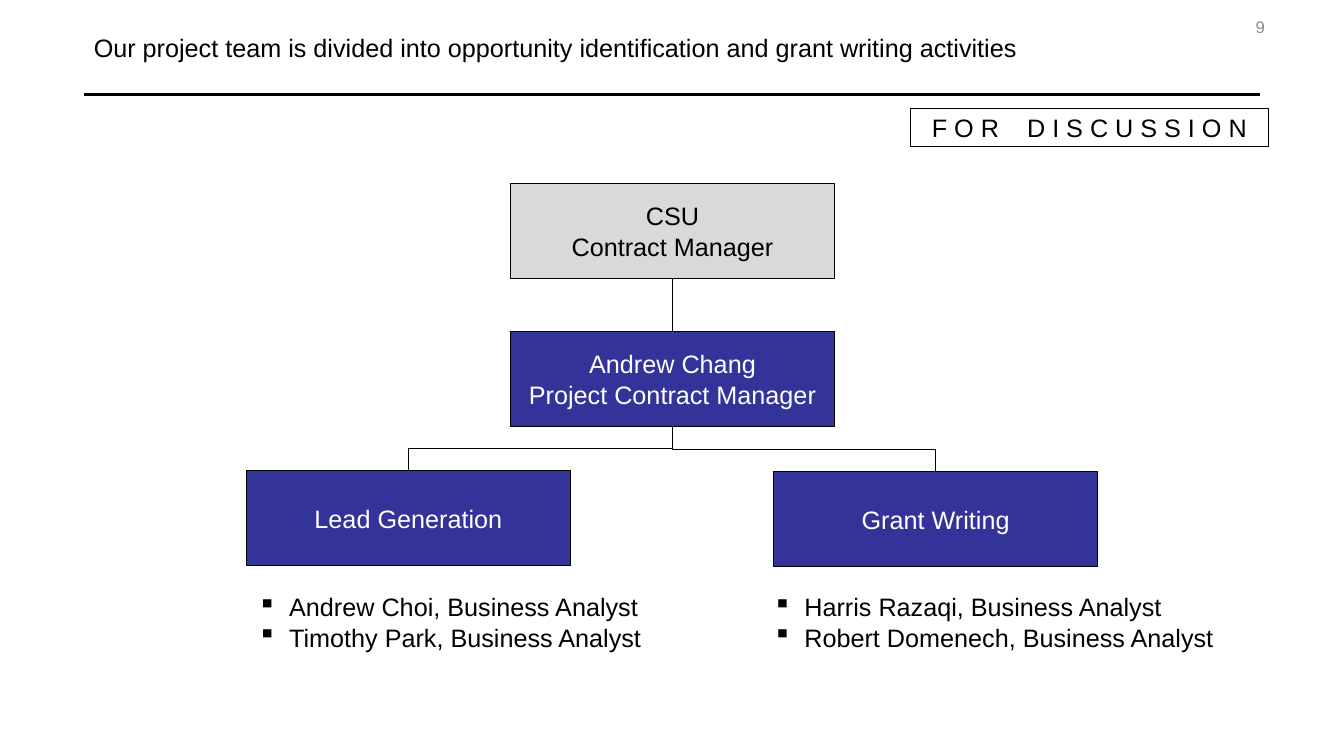
from dataclasses import dataclass

import pptx
import pptx.dml.color
import pptx.enum.shapes
import pptx.enum.text
import pptx.oxml
import pptx.oxml.ns
import pptx.util

Inches = pptx.util.Inches
Pt = pptx.util.Pt
Align = pptx.enum.text.PP_ALIGN
Anchor = pptx.enum.text.MSO_ANCHOR
Kind = pptx.enum.shapes.MSO_CONNECTOR


@dataclass(frozen=True)
class Theme:
    font: str = "Arial"
    body_size: int = 18
    number_size: int = 12
    thin_line: float = 0.75
    rule_line: float = 2
    black: str = "000000"
    white: str = "FFFFFF"
    grey: str = "D9D9D9"
    navy: str = "333399"
    muted: str = "8C8C8C"


THEME = Theme()
BOX_WIDTH, BOX_HEIGHT = 3.22, 0.94
LIST_WIDTH, LIST_HEIGHT, LIST_TOP = 5.07, 0.71, 5.82
BULLET_INDENT = 0.31
WORD_GAP = 15  # extra points after the space between the spaced-out words


@dataclass(frozen=True)
class OrgBox:
    key: str
    left: float
    top: float
    lines: tuple[str, ...]
    fill: str = THEME.navy
    color: str = THEME.white


@dataclass(frozen=True)
class StaffList:
    left: float
    names: tuple[str, ...]


ORG_BOXES = (
    OrgBox("client", 5.06, 1.82, ("CSU", "Contract Manager"), THEME.grey, THEME.black),
    OrgBox("manager", 5.06, 3.29, ("Andrew Chang", "Project Contract Manager")),
    OrgBox("writing", 7.67, 4.68, ("Grant Writing",)),
    OrgBox("leads", 2.44, 4.67, ("Lead Generation",)),
)
STAFF_LISTS = (
    StaffList(7.57, ("Harris Razaqi, Business Analyst", "Robert Domenech, Business Analyst")),
    StaffList(2.46, ("Andrew Choi, Business Analyst", "Timothy Park, Business Analyst")),
)


def rgb(value: str) -> pptx.dml.color.RGBColor:
    return pptx.dml.color.RGBColor.from_string(value)


def add_span(para, text: str, color: str = THEME.black, size: int = THEME.body_size):
    span = para.add_run()
    span.text = text
    span.font.name = THEME.font
    span.font.size = Pt(size)
    span.font.color.rgb = rgb(color)
    return span


def write_lines(frame, lines: tuple[str, ...], align, color: str = THEME.black,
                size: int = THEME.body_size, anchor=Anchor.MIDDLE) -> None:
    frame.word_wrap = True
    frame.vertical_anchor = anchor
    for index, line in enumerate(lines):
        para = frame.add_paragraph() if index else frame.paragraphs[0]
        para.alignment = align
        add_span(para, line, color, size)


def add_box(page, left: float, top: float, width: float, height: float,
            fill: str | None = None):
    box = page.shapes.add_shape(pptx.enum.shapes.MSO_SHAPE.RECTANGLE, Inches(left),
                                Inches(top), Inches(width), Inches(height))
    box.shadow.inherit = False
    if fill:
        box.fill.solid()
        box.fill.fore_color.rgb = rgb(fill)
    else:
        box.fill.background()
    box.line.color.rgb = rgb(THEME.black)
    box.line.width = Pt(THEME.thin_line)
    return box


def add_org_box(page, item: OrgBox):
    box = add_box(page, item.left, item.top, BOX_WIDTH, BOX_HEIGHT, item.fill)
    write_lines(box.text_frame, item.lines, Align.CENTER, item.color)
    return box


def add_line(page, kind, start: tuple[int, int], end: tuple[int, int],
             width: float = THEME.thin_line):
    line = page.shapes.add_connector(kind, *start, *end)
    line.line.color.rgb = rgb(THEME.black)
    line.line.width = Pt(width)
    pptx.oxml.ns  # namespace helpers are used below
    properties = line._element.spPr
    properties.append(properties.makeelement(pptx.oxml.ns.qn("a:effectLst"), {}))
    return line


def join_boxes(page, upper, lower) -> None:
    start = (upper.left + upper.width // 2, upper.top + upper.height)
    end = (lower.left + lower.width // 2, lower.top)
    across, down = end[0] - start[0], end[1] - start[1]
    line = add_line(page, Kind.ELBOW if across else Kind.STRAIGHT, start, end)
    line.begin_connect(upper, 2)
    line.end_connect(lower, 0)
    if not across:
        return
    # Turn the elbow a quarter so that it leaves downwards
    line.width, line.height = down, abs(across)
    line.left = (start[0] + end[0] - down) // 2
    line.top = (start[1] + end[1] - abs(across)) // 2
    frame = line._element.spPr.find(pptx.oxml.ns.qn("a:xfrm"))
    frame.set("rot", str((270 if across > 0 else 90) * 60000))
    frame.set("flipH", "1" if across > 0 else "0")
    frame.set("flipV", "0")


def add_text_box(page, left: float, top: float, width: float, height: float):
    return page.shapes.add_textbox(Inches(left), Inches(top), Inches(width), Inches(height))


def add_staff_list(page, staff: StaffList) -> None:
    box = add_text_box(page, staff.left, LIST_TOP, LIST_WIDTH, LIST_HEIGHT)
    write_lines(box.text_frame, staff.names, Align.LEFT, anchor=Anchor.TOP)
    box.text_frame.auto_size = pptx.enum.text.MSO_AUTO_SIZE.SHAPE_TO_FIT_TEXT
    for para in box.text_frame.paragraphs:
        properties = para._p.get_or_add_pPr()
        properties.set("marL", str(Inches(BULLET_INDENT)))
        properties.set("indent", str(-Inches(BULLET_INDENT)))
        bullet = properties.makeelement(pptx.oxml.ns.qn("a:buChar"), {"char": "▪"})
        properties.append(bullet)


def add_header(page) -> None:
    # Title and page number
    title = page.shapes.title
    title.left, title.top = Inches(0.83), Inches(0)
    title.width, title.height = Inches(11.67), Inches(0.94)
    write_lines(title.text_frame, (
        "Our project team is divided into opportunity identification and grant writing activities",
    ), Align.LEFT)
    title.text_frame.auto_size = pptx.enum.text.MSO_AUTO_SIZE.NONE
    number = add_text_box(page, 12.29, 0.07, 0.42, 0.4)
    write_lines(number.text_frame, ("9",), Align.CENTER, THEME.muted, THEME.number_size)

    # Rule under the title
    add_line(page, Kind.STRAIGHT, (Inches(0.83), Inches(0.94)),
             (Inches(12.5), Inches(0.94)), THEME.rule_line)

    # Status tag
    tag = add_box(page, 9.03, 1.08, 3.55, 0.37)
    write_lines(tag.text_frame, ("F O R",), Align.CENTER)
    para = tag.text_frame.paragraphs[0]
    gap = add_span(para, " ")
    gap.font._element.set("spc", str(WORD_GAP * 100))
    add_span(para, "D I S C U S S I O N")


def main() -> None:
    deck = pptx.Presentation()
    deck.slide_width, deck.slide_height = Inches(13.33), Inches(7.5)
    page = deck.slides.add_slide(deck.slide_layouts.get_by_name("Title Only"))
    add_header(page)

    # Organisation chart
    boxes = {item.key: add_org_box(page, item) for item in ORG_BOXES}
    for upper, lower in (("manager", "writing"), ("manager", "leads"), ("client", "manager")):
        join_boxes(page, boxes[upper], boxes[lower])

    # Team members
    for staff in STAFF_LISTS:
        add_staff_list(page, staff)
    deck.save("out.pptx")


if __name__ == "__main__":
    main()
